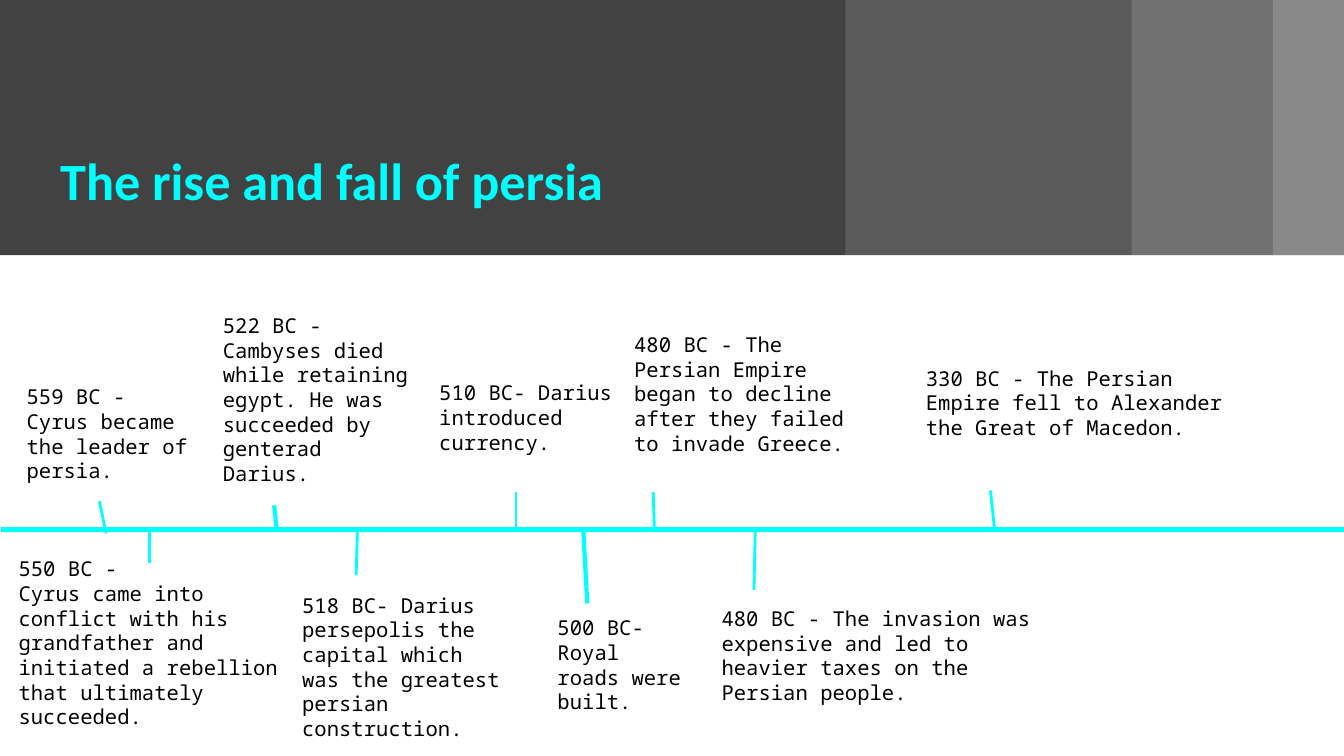
from lxml.etree import SubElement
from pptx import Presentation
from pptx.dml.color import RGBColor
from pptx.enum.shapes import MSO_CONNECTOR as Connector, MSO_SHAPE as Shape
from pptx.enum.text import MSO_ANCHOR as Anchor
from pptx.oxml.ns import qn
from pptx.util import Inches, Pt

CHARCOAL = RGBColor(0x42, 0x42, 0x42)
WHITE = RGBColor(0xFF, 0xFF, 0xFF)
CYAN = RGBColor(0x00, 0xFF, 0xFF)
BLACK = RGBColor(0x00, 0x00, 0x00)

WIDTH = 10
HEIGHT = WIDTH * 9 / 16
HEADER_HEIGHT = 1.9
AXIS_DROP = 2.04
THIN, THICK = 1.5, 2.25

BANDS = [(6.29, 2.13, 13), (8.42, 1.05, 25), (9.47, 0.53, 38)]

EVENTS = [
    (["559 BC - Cyrus became the leader of persia."],
     (0.1, -1.18, 1.47, 0.97), (0.74, -0.21, 0.79, 0.03), THIN),
    (["550 BC -", "Cyrus came into conflict with his grandfather and "
      "initiated a rebellion that ultimately succeeded."],
     (0.04, 0.1, 2.24, 1.46), (1.11, 0, 1.11, 0.25), THIN),
    (["522 BC - Cambyses died while retaining egypt. "
      "He was succeeded by genterad Darius."],
     (1.56, -1.71, 1.61, 1.5), (2.04, -0.18, 2.06, 0.01), THICK),
    (["518 BC- Darius persepolis the capital which was the greatest "
      "persian construction."],
     (2.15, 0.37, 1.7, 1.14), (2.66, -0.01, 2.65, 0.34), THIN),
    (["510 BC- Darius introduced currency."],
     (3.17, -1.21, 1.57, 0.97), (3.84, -0.28, 3.84, 0.01), THIN),
    (["500 BC- Royal roads were built."],
     (4.05, 0.54, 1.17, 0.97), (4.34, 0, 4.37, 0.55), THICK),
    (["480 BC - The Persian Empire began to decline after they failed "
      "to invade Greece."],
     (4.62, -1.57, 1.99, 1.55), (4.86, -0.28, 4.87, 0.02), THIN),
    (["480 BC - The invasion was expensive and led to heavier taxes "
      "on the Persian people."],
     (5.27, 0.47, 2.51, 1.04), (5.62, -0.01, 5.61, 0.45), THIN),
    (["330 BC - The Persian Empire fell to Alexander the Great of Macedon."],
     (6.79, -1.32, 2.51, 1.04), (7.37, -0.29, 7.4, 0), THIN),
]


def add_band(slide, left, top, width, height, color, opacity=100):
    band = slide.shapes.add_shape(
        Shape.RECTANGLE, Inches(left), Inches(top), Inches(width), Inches(height))
    band.shadow.inherit = False
    band.line.fill.background()
    band.fill.solid()
    band.fill.fore_color.rgb = color
    if opacity < 100:
        tint = band._element.spPr.find(".//" + qn("a:srgbClr"))
        SubElement(tint, qn("a:alpha"), val=str(opacity * 1000))


def add_text(slide, left, top, width, height, lines, font_name, size, color,
             bold=False, anchor=Anchor.TOP):
    frame = slide.shapes.add_textbox(
        Inches(left), Inches(top), Inches(width), Inches(height)).text_frame
    frame.word_wrap = True
    frame.vertical_anchor = anchor
    frame.margin_left = frame.margin_right = Inches(0.1)
    frame.margin_top = frame.margin_bottom = Inches(0.1)
    frame.text = "\n".join(lines)
    for paragraph in frame.paragraphs:
        font = paragraph.font
        font.name, font.size, font.bold = font_name, Pt(size), bold
        font.color.rgb = color


def add_stroke(slide, x1, y1, x2, y2, weight):
    stroke = slide.shapes.add_connector(
        Connector.STRAIGHT, Inches(x1), Inches(y1), Inches(x2), Inches(y2))
    stroke.line.color.rgb = CYAN
    stroke.line.width = Pt(weight)
    SubElement(stroke._element.spPr, qn("a:effectLst"))


def add_header(slide, left, top, width, height):
    add_band(slide, left, top, width, height, CHARCOAL)
    for offset, band_width, opacity in BANDS:
        add_band(slide, left + offset, top, band_width, height, WHITE, opacity)
    add_text(slide, left + 0.35, top + 0.17, 5.74, 1.5,
             ["The rise and fall of persia"], "Calibri", 28, CYAN,
             bold=True, anchor=Anchor.BOTTOM)


def add_timeline(slide, left, top, width):
    axis = top + AXIS_DROP
    add_stroke(slide, left + 0.01, axis, left + width + 0.04, axis, THICK)
    for lines, (x, y, text_width, text_height), (x1, y1, x2, y2), weight in EVENTS:
        add_text(slide, left + x, axis + y, text_width, text_height,
                 lines, "Noto Sans Mono", 11, BLACK)
        add_stroke(slide, left + x1, axis + y1, left + x2, axis + y2, weight)


def main():
    deck = Presentation()
    deck.slide_width, deck.slide_height = Inches(WIDTH), Inches(HEIGHT)
    slide = deck.slides.add_slide(deck.slide_layouts[6])
    add_header(slide, 0, 0, WIDTH, HEADER_HEIGHT)
    add_timeline(slide, 0, HEADER_HEIGHT, WIDTH)
    deck.save("out.pptx")


if __name__ == "__main__":
    main()
